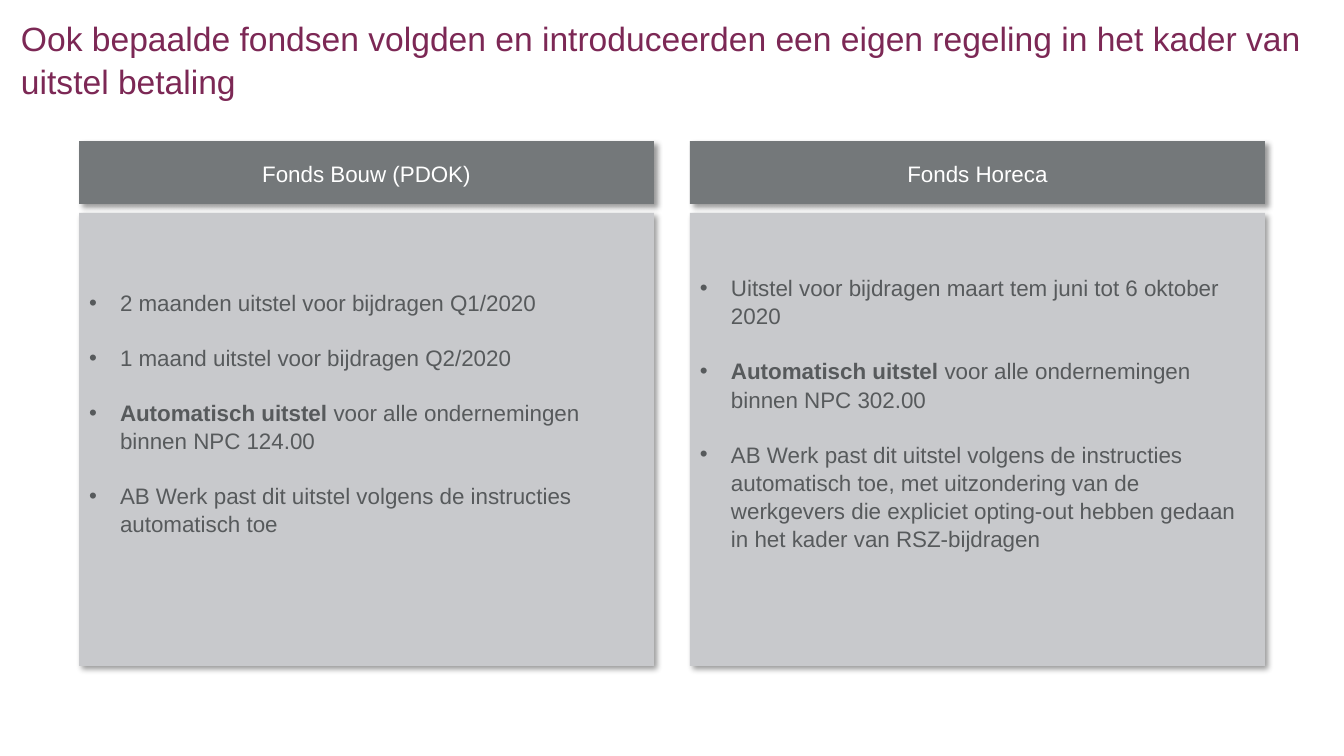
from dataclasses import dataclass

from lxml.etree import SubElement
from pptx import Presentation
from pptx.dml.color import RGBColor
from pptx.enum.text import MSO_ANCHOR, MSO_AUTO_SIZE, PP_ALIGN
from pptx.oxml.ns import qn
from pptx.shapes.base import BaseShape
from pptx.text.text import TextFrame
from pptx.util import Emu, Pt

SLIDE_W, SLIDE_H = 1344, 756
COLORS = {"title": "7C2855", "header": "74787A", "panel": "C8C9CC",
          "body": "575A5C", "white": "FFFFFF", "shadow": "000000"}
LEFT, STEP, WIDTH = 79, 611, 575
HEADER_TOP, HEADER_H = 141, 63
PANEL_TOP, PANEL_H = 213, 453
INSET_X, INSET_Y, HANGING, BOTTOM_ROOM = 10, 5, 31, 59
LINE_SPACING = 1.05
BULLET_GAP = 19.2


@dataclass
class Run:
    text: str
    bold: bool = False


@dataclass
class Fund:
    name: str
    bullets: list[list[Run]]


FUNDS = [
    Fund("Fonds Bouw (PDOK)", [
        [Run("2 maanden uitstel voor bijdragen Q1/2020")],
        [Run("1 maand uitstel voor bijdragen Q2/2020")],
        [Run("Automatisch uitstel ", True), Run("voor alle ondernemingen binnen NPC 124.00")],
        [Run("AB Werk past dit uitstel volgens de instructies automatisch toe")],
    ]),
    Fund("Fonds Horeca", [
        [Run("Uitstel voor bijdragen maart tem juni tot 6 oktober 2020")],
        [Run("Automatisch uitstel ", True), Run("voor alle ondernemingen binnen NPC 302.00")],
        [Run("AB Werk past dit uitstel volgens de instructies automatisch toe, met uitzondering "
             "van de werkgevers die expliciet opting-out hebben gedaan in het kader van "
             "RSZ-bijdragen")],
    ]),
]


def px(n: int) -> Emu:
    return Emu(n * 12192000 // SLIDE_W)


def place(s: BaseShape, left: int, top: int, width: int, height: int) -> None:
    s.left, s.top, s.width, s.height = px(left), px(top), px(width), px(height)


def set_frame(tf: TextFrame, anchor: MSO_ANCHOR, inset_x: int, top: int, bottom: int) -> None:
    tf.word_wrap = True
    tf.auto_size = MSO_AUTO_SIZE.NONE
    tf.vertical_anchor = anchor
    tf.margin_left = tf.margin_right = px(inset_x)
    tf.margin_top, tf.margin_bottom = px(top), px(bottom)


def write(tf: TextFrame, paragraphs: list[list[Run]], size: int, color: str,
          align: PP_ALIGN = PP_ALIGN.LEFT, bulleted: bool = False) -> None:
    for i, runs in enumerate(paragraphs):
        p = tf.paragraphs[0] if i == 0 else tf.add_paragraph()
        if bulleted:
            pPr = p._p.get_or_add_pPr()
            pPr.set("marL", str(px(HANGING)))
            pPr.set("indent", str(-px(HANGING)))
            SubElement(pPr, qn("a:buFont"), typeface="Arial")
            SubElement(pPr, qn("a:buChar"), char="•")
        p.alignment = align
        p.line_spacing = LINE_SPACING
        p.space_before = Pt(BULLET_GAP if i else 0)
        for run in runs:
            r = p.add_run()
            r.text = run.text
            r.font.name = "Arial"
            r.font.size = Pt(size)
            r.font.bold = run.bold
            r.font.color.rgb = RGBColor.from_string(COLORS[color])


def paint(s: BaseShape, color: str) -> None:
    s.fill.solid()
    s.fill.fore_color.rgb = RGBColor.from_string(COLORS[color])
    s.line.fill.background()
    effects = SubElement(s._element.spPr, qn("a:effectLst"))
    shadow = SubElement(effects, qn("a:outerShdw"), blurRad=str(Pt(4)), dist=str(Pt(3)),
                        dir="2700000", algn="tl", rotWithShape="0")
    tint = SubElement(shadow, qn("a:srgbClr"), val=COLORS["shadow"])
    SubElement(tint, qn("a:alpha"), val="40000")


def draw_fund(header: BaseShape, panel: BaseShape, fund: Fund, left: int) -> None:
    place(header, left, HEADER_TOP, WIDTH, HEADER_H)
    paint(header, "header")
    set_frame(header.text_frame, MSO_ANCHOR.MIDDLE, INSET_X, INSET_Y, INSET_Y)
    write(header.text_frame, [[Run(fund.name)]], 16, "white", PP_ALIGN.CENTER)

    place(panel, left, PANEL_TOP, WIDTH, PANEL_H)
    paint(panel, "panel")
    set_frame(panel.text_frame, MSO_ANCHOR.MIDDLE, INSET_X, INSET_Y, BOTTOM_ROOM)
    write(panel.text_frame, fund.bullets, 16, "body", bulleted=True)


def main() -> None:
    prs = Presentation()
    prs.slide_width, prs.slide_height = px(SLIDE_W), px(SLIDE_H)
    slide = prs.slides.add_slide(prs.slide_layouts.get_by_name("Comparison"))

    title, *boxes = slide.placeholders
    place(title, 21, 59, 1297, 42)
    set_frame(title.text_frame, MSO_ANCHOR.BOTTOM, 0, 0, 0)
    write(title.text_frame, [[Run("Ook bepaalde fondsen volgden en introduceerden een eigen "
                                  "regeling in het kader van uitstel betaling")]], 24, "title")

    for i, fund in enumerate(FUNDS):
        draw_fund(boxes[2 * i], boxes[2 * i + 1], fund, LEFT + i * STEP)

    prs.save("out.pptx")


if __name__ == "__main__":
    main()
